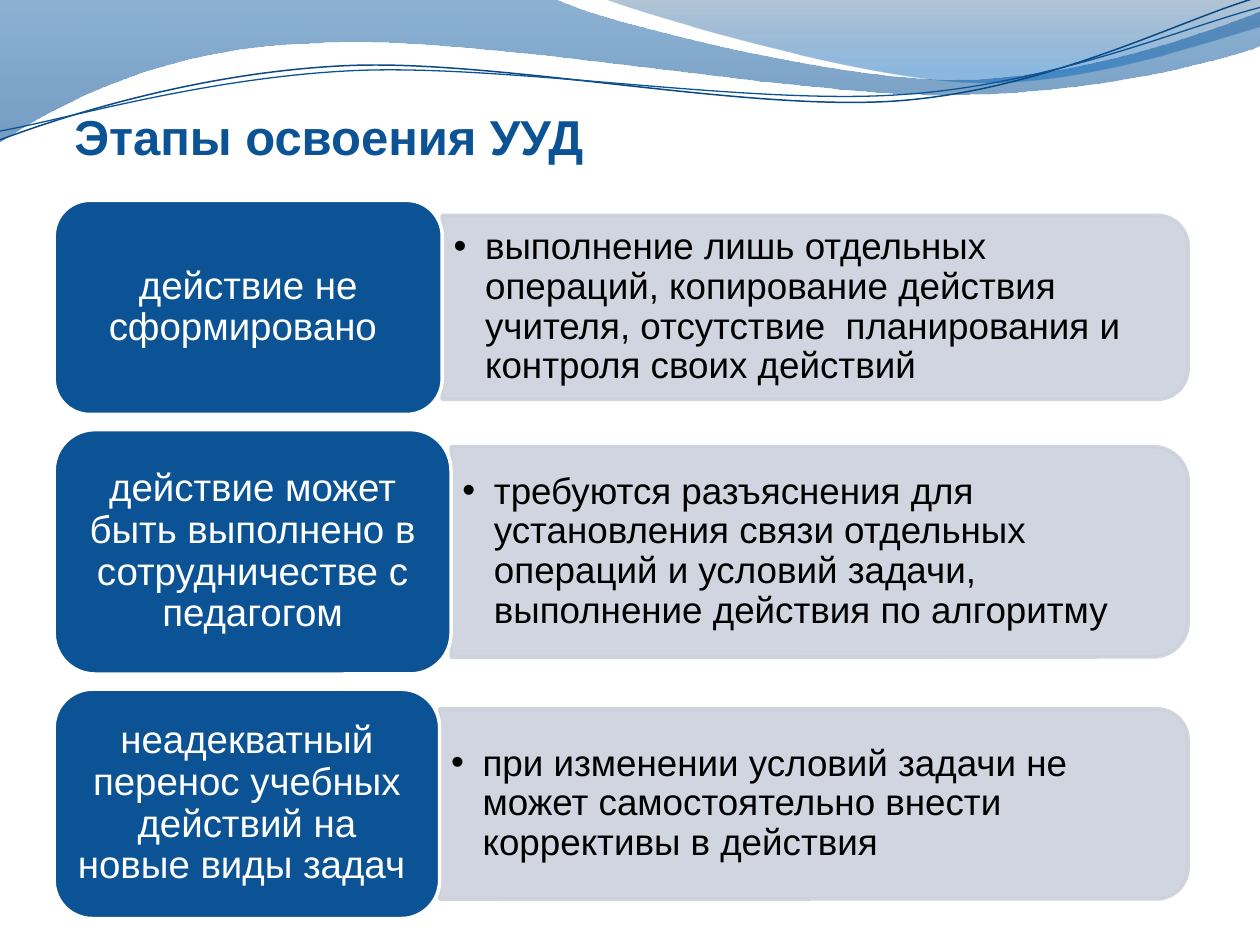
from dataclasses import dataclass
from math import cos, radians, sin

from lxml import etree
from pptx import Presentation
from pptx.dml.color import RGBColor
from pptx.enum.shapes import MSO_SHAPE
from pptx.enum.text import MSO_ANCHOR, MSO_AUTO_SIZE, PP_ALIGN
from pptx.oxml.ns import qn
from pptx.util import Inches, Pt

ROUNDED, ROUNDED_END = MSO_SHAPE.ROUNDED_RECTANGLE, MSO_SHAPE.ROUND_2_SAME_RECTANGLE
LEFT, CENTER = PP_ALIGN.LEFT, PP_ALIGN.CENTER
MIDDLE, BOTTOM = MSO_ANCHOR.MIDDLE, MSO_ANCHOR.BOTTOM
TITLE_ONLY = 5
STRAND_TILT = -2.7


@dataclass(frozen=True)
class Theme:
    font: str = "Arial"
    blue: str = "0B5394"
    deep_blue: str = "0A4983"
    panel: str = "CCD1DC"
    white: str = "FFFFFF"
    black: str = "000000"
    title_size: int = 28
    label_size: int = 22
    detail_size: int = 21


THEME = Theme()

# Header waves: start point, then line (1 point) or cubic curve (3 points) steps
BANDS = [
    ((0, 0), [[(4.4, -0.01)], [(4.76, 0.17), (6.64, 0.63), (7.58, 0.63)],
              [(8.53, 0.63), (9.58, 0.26), (10, 0.09)], [(10.01, 0.36)],
              [(9.83, 0.44), (8.7, 0.76), (7.46, 0.75)],
              [(6.22, 0.75), (3.82, 0.28), (2.57, 0.34)],
              [(1.29, 0.36), (0.46, 0.83), (-0.01, 1.13)], [(0, 0)]],
     [(0, "00539E", 45), (1, "004C90", 55)]),
    ((4.79, -0.01), [[(5.09, 0.11), (6.82, 0.62), (7.69, 0.65)],
                     [(8.56, 0.69), (9.61, 0.32), (10, 0.21)], [(10, 0)], [(4.79, -0.01)]],
     [(0, "003E76", 30), (0.8, "0063BC", 45)]),
]
# Strands also have a colour, a line width and the centre they are tilted about
STRANDS = [
    ((0, 1.11), [[(0.48, 0.93), (1.58, 0.57), (2.77, 0.52)],
                 [(3.95, 0.47), (5.93, 0.89), (7.13, 0.8)],
                 [(8.33, 0.71), (9.38, 0.15), (9.98, -0.02)]],
     THEME.deep_blue, 0.85, (4.99, 0.57)),
    ((0, 1.04), [[(0.47, 0.96), (1.64, 0.61), (2.83, 0.56)],
                 [(4.03, 0.51), (5.97, 0.84), (7.17, 0.75)],
                 [(8.36, 0.67), (9.41, 0.21), (10, 0.06)]],
     THEME.blue, 0.75, (5, 0.59)),
]

# Stages: label, detail, label width, label height, panel height
STAGES = [
    ("действие не сформировано ",
     "выполнение лишь отдельных операций, копирование действия учителя, "
     "отсутствие  планирования и контроля своих действий", 3.08, 1.7, 1.46),
    ("действие может быть выполнено в сотрудничестве с педагогом",
     "требуются разъяснения для установления связи отдельных операций и условий задачи, "
     "выполнение действия по алгоритму", 3.15, 1.94, 1.67),
    ("неадекватный перенос учебных действий на новые виды задач ",
     "при изменении условий задачи не может самостоятельно внести коррективы в действия",
     3.06, 1.82, 1.51),
]


def rgb(value):
    return RGBColor.from_string(value)


def set_alpha(parent, percent):
    for color in parent.iter(qn("a:srgbClr")):
        etree.SubElement(color, qn("a:alpha"), val=str(percent * 1000))


def write_text(tf, text, size, color, align, anchor, insets, bold=False, spacing=None):
    x, top, bottom = insets
    frame = dict(word_wrap=True, auto_size=MSO_AUTO_SIZE.NONE, vertical_anchor=anchor,
                 margin_left=Inches(x), margin_right=Inches(x),
                 margin_top=Inches(top), margin_bottom=Inches(bottom))
    for name, value in frame.items():
        setattr(tf, name, value)
    p = tf.paragraphs[0]
    p.alignment, p.line_spacing = align, spacing
    r = p.add_run()
    r.text = text
    for name, value in dict(name=THEME.font, size=Pt(size), bold=bold).items():
        setattr(r.font, name, value)
    r.font.color.rgb = rgb(color)
    return p


def add_bullet(p, indent):
    p.level = 1
    pPr = p._p.get_or_add_pPr()
    pPr.set("marL", str(Inches(indent)))
    pPr.set("indent", str(-Inches(indent)))
    etree.SubElement(pPr, qn("a:buFont"), typeface=THEME.font)
    etree.SubElement(pPr, qn("a:buChar"), char="•")


def add_curve(s, start, steps, close):
    """Freeform whose three-point steps become cubic curves."""
    points = [(Inches(x), Inches(y)) for step in steps for x, y in step]
    builder = s.shapes.build_freeform(*map(Inches, start))
    builder.add_line_segments(points, close=close)
    sp = builder.convert_to_shape()
    sp.shadow.inherit = False
    segments = iter(list(sp._element.iter(qn("a:lnTo"))))
    for step in steps:
        first, *others = [next(segments) for _ in step]
        if others:
            first.tag = qn("a:cubicBezTo")
        for segment in others:
            first.append(segment[0])
            segment.getparent().remove(segment)
    return sp


def turn(point, centre, degrees):
    angle = radians(degrees)
    dx, dy = point[0] - centre[0], point[1] - centre[1]
    return (centre[0] + dx * cos(angle) - dy * sin(angle),
            centre[1] + dx * sin(angle) + dy * cos(angle))


def add_header(s):
    # Translucent gradient bands
    for start, steps, stops in BANDS:
        sp = add_curve(s, start, steps, True)
        sp.line.fill.background()
        sp.fill.gradient()
        sp.fill.gradient_angle = 270
        for stop, (position, color, alpha) in zip(sp.fill.gradient_stops, stops):
            stop.position = position
            stop.color.rgb = rgb(color)
            set_alpha(stop._gs, alpha)
    # Thin strands: levelled first, then tilted as shapes
    for start, steps, color, width, centre in STRANDS:
        level = [[turn(point, centre, -STRAND_TILT) for point in step] for step in steps]
        sp = add_curve(s, turn(start, centre, -STRAND_TILT), level, False)
        sp.rotation = STRAND_TILT
        sp.fill.background()
        sp.line.color.rgb = rgb(color)
        sp.line.width = Pt(width)


def add_title(s, x, y, w, h):
    sp = s.shapes.title
    sp.left, sp.top, sp.width, sp.height = map(Inches, (x, y, w, h))
    write_text(sp.text_frame, "Этапы освоения УУД", THEME.title_size, THEME.blue,
               LEFT, BOTTOM, (0, 0.05, 0), bold=True)
    sp._element.getparent().append(sp._element)


def add_block(s, kind, x, y, w, h, fill, line):
    sp = s.shapes.add_shape(kind, *map(Inches, (x, y, w, h)))
    sp.shadow.inherit = False
    sp.fill.solid()
    sp.fill.fore_color.rgb = rgb(fill)
    sp.line.color.rgb = rgb(line)
    sp.line.width = Pt(2)
    return sp


def add_stage(s, x, y, w, h, label, detail, label_w, panel_h):
    # Detail panel: a quarter turn puts the rounded end on the right
    panel_x, panel_w = x + label_w, w - label_w
    mid_x, mid_y = panel_x + panel_w / 2, y + h / 2
    panel = add_block(s, ROUNDED_END, mid_x - panel_h / 2, mid_y - panel_w / 2,
                      panel_h, panel_w, THEME.panel, THEME.panel)
    panel.rotation = 90
    set_alpha(panel._element.spPr, 90)
    tb = s.shapes.add_textbox(*map(Inches, (panel_x, mid_y - panel_h / 2 + 0.07,
                                            panel_w - 0.07, panel_h - 0.14)))
    p = write_text(tb.text_frame, detail, THEME.detail_size, THEME.black, LEFT, MIDDLE,
                   (0.09, 0.04, 0.04), spacing=0.9)
    add_bullet(p, 0.25)
    # Stage label
    sp = add_block(s, ROUNDED, x, y, label_w, h, THEME.blue, THEME.white)
    write_text(sp.text_frame, label, THEME.label_size, THEME.white, CENTER, MIDDLE,
               (0.09, 0.05, 0.05), spacing=0.9)


def add_stages(s, x, y, w, gap):
    for label, detail, label_w, h, panel_h in STAGES:
        add_stage(s, x, y, w, h, label, detail, label_w, panel_h)
        y += h + gap


def main():
    prs = Presentation()
    prs.slide_width, prs.slide_height = Inches(10), Inches(7.5)
    s = prs.slides.add_slide(prs.slide_layouts[TITLE_ONLY])
    add_header(s)
    add_title(s, 0.59, 0.3, 9, 1.01)
    add_stages(s, 0.43, 1.59, 9, 0.12)
    prs.save("out.pptx")


if __name__ == "__main__":
    main()
